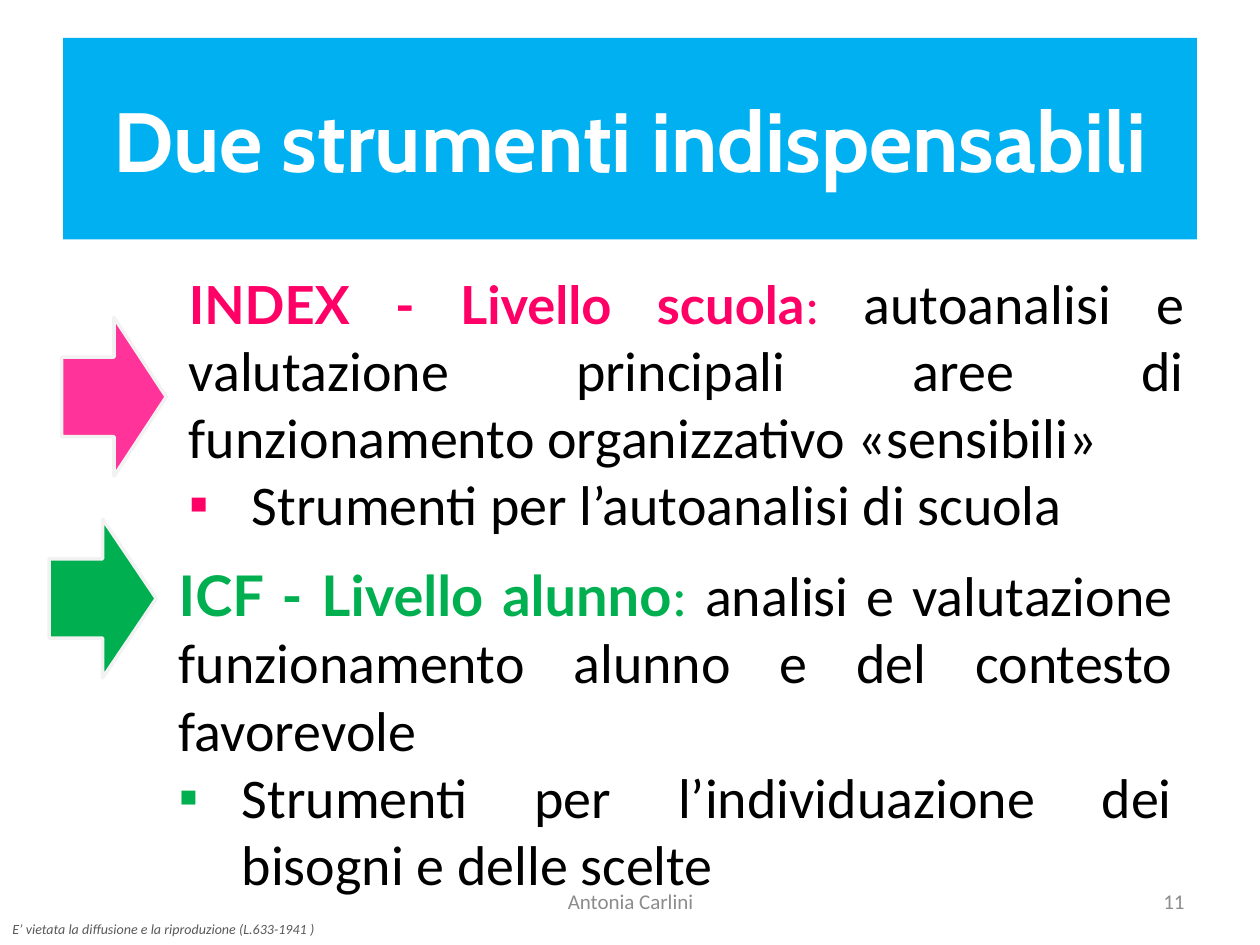
from dataclasses import dataclass

from lxml import etree
from pptx import Presentation
from pptx.dml.color import RGBColor
from pptx.enum.shapes import MSO_SHAPE
from pptx.enum.text import MSO_ANCHOR, PP_ALIGN
from pptx.oxml.ns import qn
from pptx.util import Inches, Pt


@dataclass(frozen=True)
class Theme:
    banner: str = "00B0F0"
    white: str = "FFFFFF"
    black: str = "000000"
    index: str = "FF0066"
    index_arrow: str = "FF3399"
    icf: str = "00B050"
    outline: str = "F2F2F2"
    footer: str = "8C8C8C"
    notice: str = "595959"
    title_font: str = "Cabin"
    lead_font: str = "Lato"
    body_font: str = "Calibri"
    title_size: int = 48
    body_size: int = 32
    index_size: int = 30
    footer_size: int = 12
    notice_size: int = 8


class SlideBuilder:
    """Places elements by (left, top, width, height) in grid units of one inch."""

    COLUMNS, ROWS = 10, 7.5

    def __init__(self, theme):
        self.theme = theme
        self.deck = Presentation()
        self.deck.slide_width = Inches(self.COLUMNS)
        self.deck.slide_height = Inches(self.ROWS)
        self.slide = self.deck.slides.add_slide(self.deck.slide_layouts[5])

    def cells(self, area):
        sizes = (self.deck.slide_width, self.deck.slide_height) * 2
        counts = (self.COLUMNS, self.ROWS) * 2
        return [round(size * share / count)
                for size, share, count in zip(sizes, area, counts)]

    def style(self, font, family, size, color, bold=None, italic=None):
        font.name, font.size = family, Pt(size)
        font.color.rgb = RGBColor.from_string(color)
        font.bold, font.italic = bold, italic

    def title(self, area, wording):
        banner = self.slide.shapes.title
        banner.left, banner.top, banner.width, banner.height = self.cells(area)
        banner.fill.solid()
        banner.fill.fore_color.rgb = RGBColor.from_string(self.theme.banner)
        frame = banner.text_frame
        frame.text = wording
        frame.vertical_anchor = MSO_ANCHOR.MIDDLE
        heading = frame.paragraphs[0]
        heading.alignment = PP_ALIGN.CENTER
        self.style(heading.font, self.theme.title_font, self.theme.title_size,
                   self.theme.white, bold=True)

    def text_frame(self, area, anchor=MSO_ANCHOR.TOP):
        frame = self.slide.shapes.add_textbox(*self.cells(area)).text_frame
        frame.word_wrap = True
        frame.vertical_anchor = anchor
        return frame

    def small_text(self, area, wording, size, color, align=PP_ALIGN.LEFT,
                   anchor=MSO_ANCHOR.MIDDLE, italic=None):
        line = self.text_frame(area, anchor).paragraphs[0]
        line.text = wording
        line.alignment = align
        self.style(line.font, self.theme.body_font, size, color, italic=italic)

    def arrow(self, area, color):
        arrow = self.slide.shapes.add_shape(MSO_SHAPE.RIGHT_ARROW, *self.cells(area))
        arrow.shadow.inherit = False
        arrow.fill.solid()
        arrow.fill.fore_color.rgb = RGBColor.from_string(color)
        arrow.line.color.rgb = RGBColor.from_string(self.theme.outline)
        arrow.line.width = Pt(2)

    def instrument(self, area, color, lead, lead_size, colon, description, tool):
        """Coloured lead with its description, then one bulleted tool."""
        theme = self.theme
        frame = self.text_frame(area)
        summary = frame.paragraphs[0]
        for wording, family, size, ink, bold in (
            (lead, theme.lead_font, lead_size, color, True),
            (colon, theme.body_font, lead_size, color, False),
            (description, theme.body_font, theme.body_size, theme.black, False),
        ):
            run = summary.add_run()
            run.text = wording
            self.style(run.font, family, size, ink, bold)
        item = frame.add_paragraph()
        item.text = tool
        self.style(item.font, theme.body_font, theme.body_size, theme.black)
        self.bullet(item, color)
        for paragraph in (summary, item):
            paragraph.alignment = PP_ALIGN.JUSTIFY

    def bullet(self, paragraph, color):
        props = paragraph._p.get_or_add_pPr()
        props.set("marL", str(Inches(0.5)))
        props.set("indent", str(-Inches(0.5)))
        marks = [etree.Element(qn("a:buClr")),
                 etree.Element(qn("a:buFont"), typeface="Arial"),
                 etree.Element(qn("a:buChar"), char="▪")]
        etree.SubElement(marks[0], qn("a:srgbClr"), val=color)
        for position, mark in enumerate(marks):
            props.insert(position, mark)


def main():
    theme = Theme()
    page = SlideBuilder(theme)
    page.title((0.5, 0.3, 9, 1.6), "Due strumenti indispensabili")

    page.small_text((7.17, 6.95, 2.33, 0.4), "11", theme.footer_size,
                    theme.footer, PP_ALIGN.RIGHT)
    page.small_text((3.42, 6.95, 3.17, 0.4), "Antonia Carlini", theme.footer_size,
                    theme.footer, PP_ALIGN.CENTER)
    page.small_text((0, 7.26, 2.64, 0.24),
                    "E’ vietata la diffusione e la riproduzione (L.633-1941 )",
                    theme.notice_size, theme.notice, anchor=MSO_ANCHOR.TOP, italic=True)

    page.arrow((0.49, 2.52, 0.83, 1.26), theme.index_arrow)
    page.arrow((0.39, 4.12, 0.85, 1.26), theme.icf)

    page.instrument(
        (1.4, 2.08, 8.1, 2.26), theme.index,
        "INDEX - Livello scuola", theme.index_size, ": ",
        "autoanalisi e valutazione principali aree di funzionamento "
        "organizzativo «sensibili»",
        "Strumenti per l’autoanalisi di scuola")
    page.instrument(
        (1.32, 4.4, 8.09, 2.79), theme.icf,
        "ICF - Livello alunno", theme.body_size, ":",
        " analisi e valutazione funzionamento alunno e del contesto favorevole",
        "Strumenti per l’individuazione dei bisogni e delle scelte")

    page.deck.save("out.pptx")


if __name__ == "__main__":
    main()
